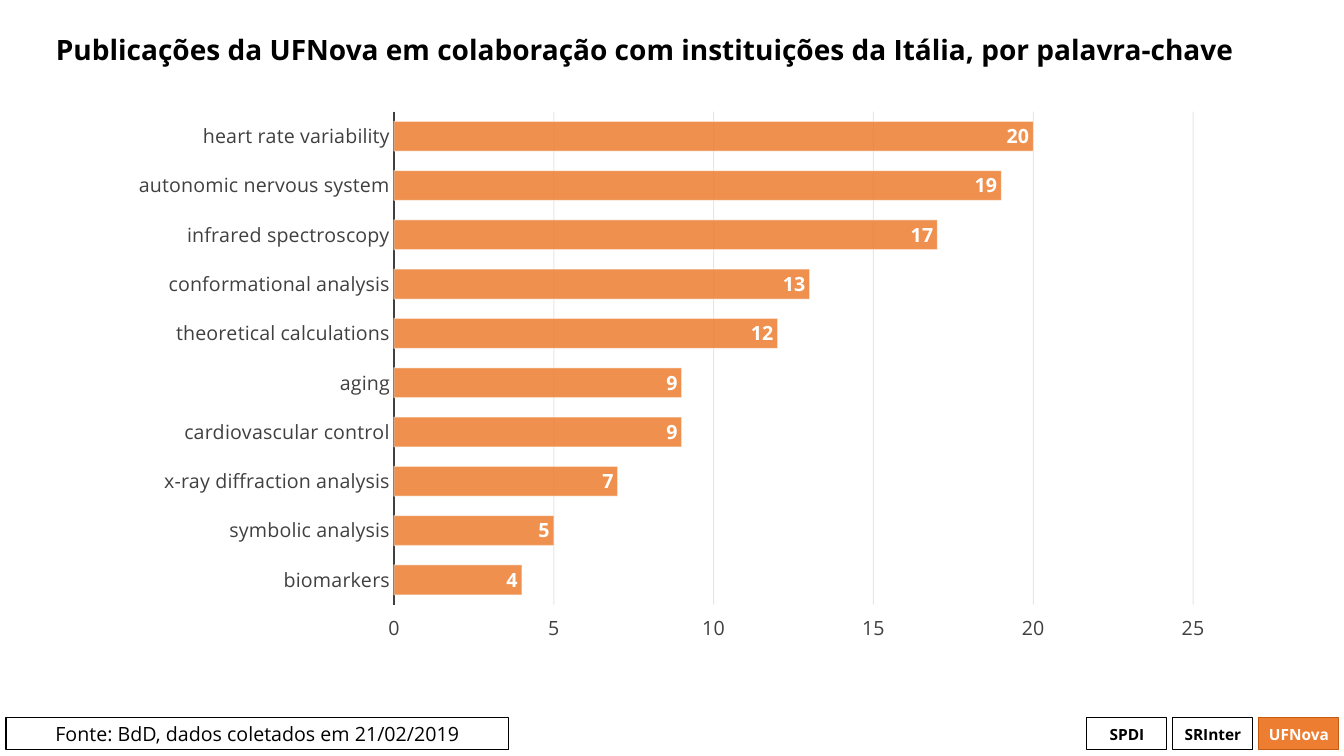
from pptx import Presentation
from pptx.chart.data import CategoryChartData
from pptx.dml.color import RGBColor
from pptx.enum.chart import (XL_CHART_TYPE as ChartType, XL_LABEL_POSITION as LabelPosition,
                             XL_TICK_LABEL_POSITION as TickLabels, XL_TICK_MARK as TickMark)
from pptx.enum.shapes import MSO_SHAPE as Shape
from pptx.enum.text import MSO_ANCHOR as Anchor, PP_ALIGN as Align
from pptx.oxml import parse_xml
from pptx.oxml.ns import nsdecls, qn
from pptx.util import Emu, Pt

FONT = "Open Sans"
COLORS = {"black": "000000", "white": "FFFFFF", "orange": "ED7D31",
          "rust": "C55A11", "gray": "404040", "grid": "0D0D0D"}


def px(*lengths):
    return [Emu(round(length * 914400 / 100.8)) for length in lengths]


def style_font(font, size, color, bold=False):
    for name, value in {"name": FONT, "size": Pt(size), "bold": bold}.items():
        setattr(font, name, value)
    font.color.rgb = RGBColor.from_string(COLORS[color])


deck = Presentation()
deck.slide_width, deck.slide_height = px(1344, 756)
page = deck.slides.add_slide(deck.slide_layouts[6])

# Footer boxes: left, width, text, size, bold, fill, line, text color
footer = [
    (1087, 80, "SPDI", 11, True, None, "black", "black"),
    (1173, 80, "SRInter", 11, True, None, "black", "black"),
    (1259, 80, "UFNova", 11, True, "orange", "rust", "white"),
    (6, 503, "Fonte: BdD, dados coletados em 21/02/2019", 14, False, None, "black", "black"),
]
for left, width, text, size, bold, fill, line, color in footer:
    box = page.shapes.add_shape(Shape.RECTANGLE, *px(left, 718, width, 32))
    box.shadow.inherit = False
    if fill:
        box.fill.solid()
        box.fill.fore_color.rgb = RGBColor.from_string(COLORS[fill])
    else:
        box.fill.background()
    box.line.color.rgb = RGBColor.from_string(COLORS[line])
    box.line.width = Pt(0.75)
    box.text_frame.vertical_anchor = Anchor.MIDDLE
    para = box.text_frame.paragraphs[0]
    para.alignment = Align.CENTER
    span = para.add_run()
    span.text = text
    style_font(span.font, size, color, bold)

# Title
title = page.shapes.add_textbox(*px(46, 5, 1251, 92))
title.text_frame.word_wrap = True
title.text_frame.vertical_anchor = Anchor.MIDDLE
para = title.text_frame.paragraphs[0]
para.line_spacing = 0.9
span = para.add_run()
span.text = ("Publicações da UFNova em colaboração com instituições da Itália, "
             "por palavra-chave")
style_font(span.font, 20, "black", True)

# Keyword chart
keywords = {
    "heart rate variability": 20, "autonomic nervous system": 19,
    "infrared spectroscopy": 17, "conformational analysis": 13,
    "theoretical calculations": 12, "aging": 9, "cardiovascular control": 9,
    "x-ray diffraction analysis": 7, "symbolic analysis": 5, "biomarkers": 4,
}
data = CategoryChartData()
data.categories = list(keywords)
data.add_series("Series 1", list(keywords.values()))
chart = page.shapes.add_chart(ChartType.BAR_CLUSTERED, *px(116, 100, 1111, 555), data).chart
chart.has_legend = False
chart.has_title = False
style_font(chart.font, 14, "black")

# Bars and labels
plot = chart.plots[0]
plot.gap_width = 65
plot.vary_by_categories = False
bars = plot.series[0]
bars.invert_if_negative = False
bars.format.fill.solid()
bars.format.fill.fore_color.rgb = RGBColor.from_string(COLORS["orange"])
bars.format.line.color.rgb = RGBColor.from_string(COLORS["white"])
bars.format.line.width = Pt(0.75)
labels = bars.data_labels
labels.show_value = True
labels.position = LabelPosition.INSIDE_END
style_font(labels.font, 14, "white", True)

# Axes: the reversed categories put the value labels at the bottom when high
categories, values = chart.category_axis, chart.value_axis
for axis in (categories, values):
    axis.major_tick_mark = axis.minor_tick_mark = TickMark.NONE
    style_font(axis.tick_labels.font, 14, "gray")
categories.reverse_order = True
categories.format.line.color.rgb = RGBColor.from_string(COLORS["gray"])
categories.format.line.width = Pt(1.5)
value_format = {"minimum_scale": 0, "maximum_scale": 25, "major_unit": 5,
                "tick_label_position": TickLabels.HIGH}
for name, value in value_format.items():
    setattr(values, name, value)
values.format.line.fill.background()
grid = values.major_gridlines.format.line
grid.color.rgb = RGBColor.from_string(COLORS["grid"])
grid.width = Pt(0.75)

# Transparency, in percent of opacity
space = chart._chartSpace
opacity = {"//c:ser/c:spPr/a:solidFill/a:srgbClr": 85,
           "//c:ser/c:spPr/a:ln/a:solidFill/a:srgbClr": 50,
           "//c:majorGridlines/c:spPr/a:ln/a:solidFill/a:srgbClr": 10}
for query, percent in opacity.items():
    for color in space.xpath(query):
        color.append(parse_xml(f'<a:alpha {nsdecls("a")} val="{percent * 1000}"/>'))

# Plot area position, as shares of the chart
area = space.find(qn("c:chart")).find(qn("c:plotArea"))
for layout in area.findall(qn("c:layout")):
    area.remove(layout)
shares = "".join(f'<c:{side} val="{share}"/>' for side, share in
                 {"x": 0.25, "y": 0.02, "w": 0.72, "h": 0.89}.items())
area.insert(0, parse_xml(
    f'<c:layout {nsdecls("c")}><c:manualLayout><c:layoutTarget val="inner"/>'
    f'<c:xMode val="edge"/><c:yMode val="edge"/>{shares}</c:manualLayout></c:layout>'))

# Chart background and border
white = f'<a:solidFill><a:srgbClr val="{COLORS["white"]}"/></a:solidFill>'
space.find(qn("c:chart")).addnext(parse_xml(
    f'<c:spPr {nsdecls("c", "a")}>{white}<a:ln w="{Pt(0.75)}">{white}</a:ln></c:spPr>'))

deck.save("out.pptx")
